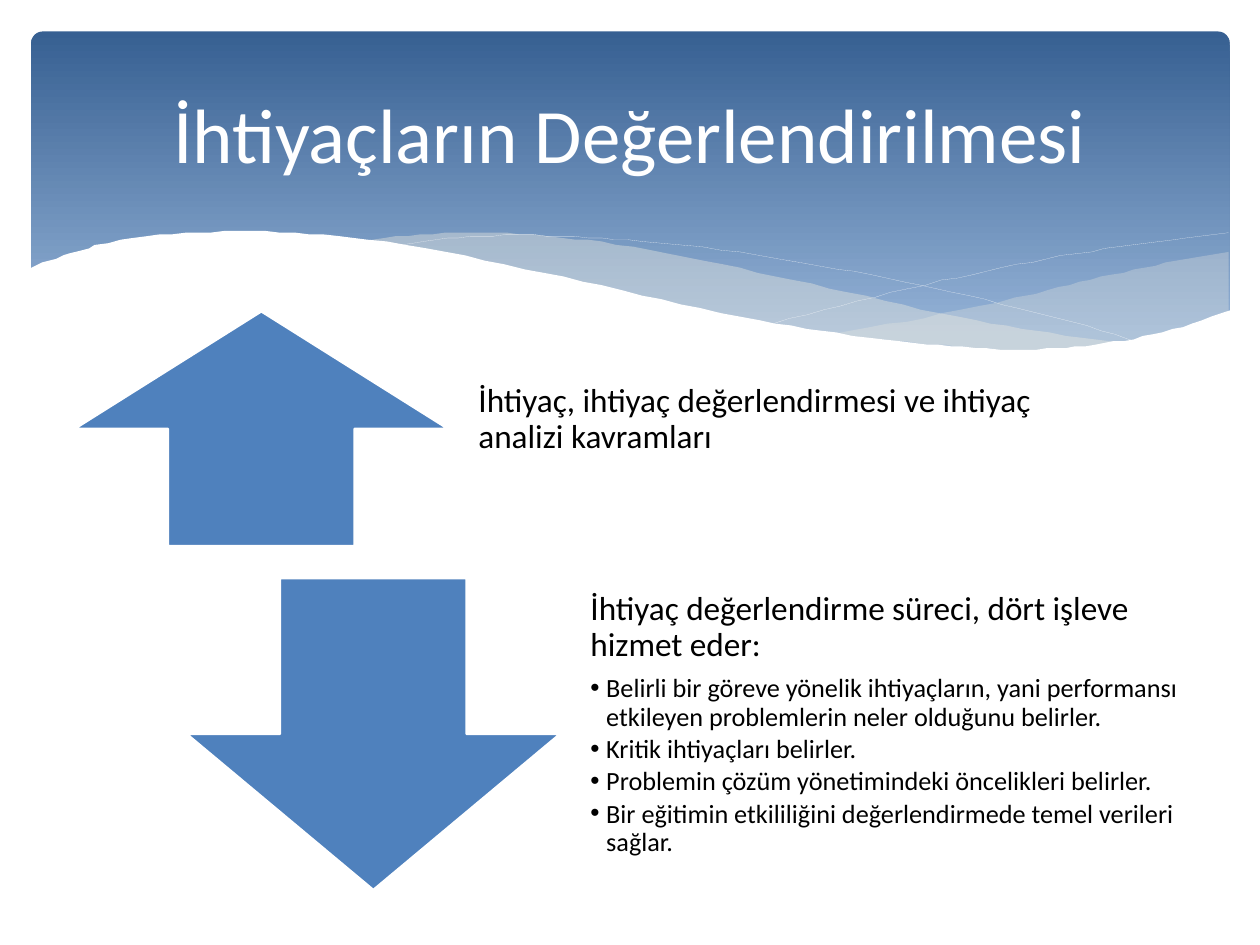
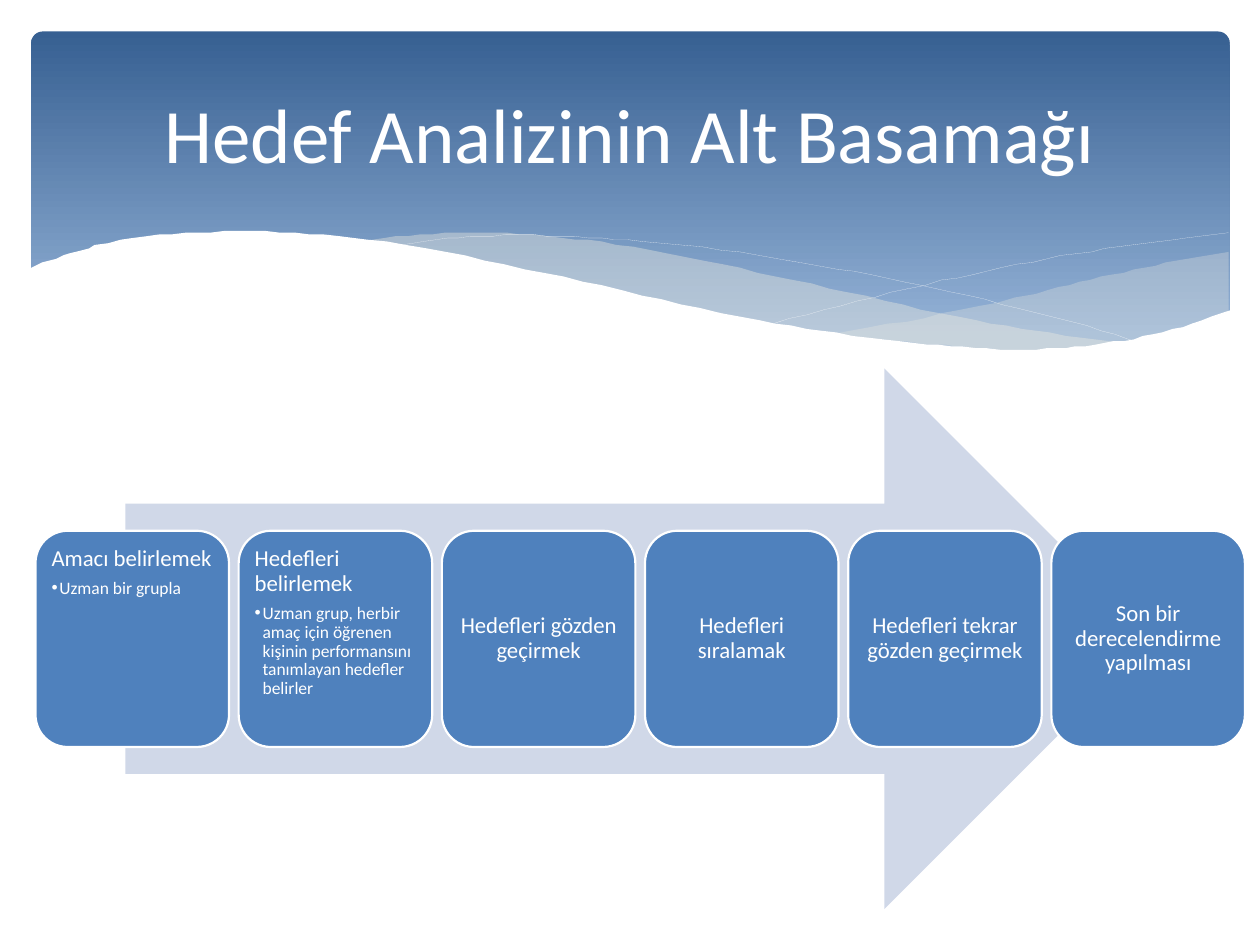
"""Build two Turkish slides on needs assessment and goal analysis under a shared wave band."""
from itertools import pairwise
from lxml.etree import SubElement
from pptx import Presentation
from pptx.dml.color import RGBColor
from pptx.enum.shapes import MSO_SHAPE as SHAPE
from pptx.enum.text import MSO_ANCHOR as ANCHOR, MSO_AUTO_SIZE as AUTO, PP_ALIGN as ALIGN
from pptx.oxml.ns import qn
from pptx.util import Pt

WHITE = RGBColor(0xFF, 0xFF, 0xFF)
BLACK = RGBColor(0x00, 0x00, 0x00)
NAVY = RGBColor(0x37, 0x60, 0x92)
SKY = RGBColor(0x95, 0xB3, 0xD7)
CREAM = RGBColor(0xEE, 0xEC, 0xE1)
BLUE = RGBColor(0x4F, 0x81, 0xBD)
PALE = RGBColor(0xD0, 0xD8, 0xE8)
FONT = "Calibri"
CURVE_STEPS = 10

RIGHT_TOP = [(476, 191), (580, 170.5), (641.5, 155.5), (702.5, 144)]
RIGHT_BOTTOM = [(476, 191), (536, 197), (586, 200), (640, 196), (702.5, 178)]
MIDDLE_TOP = [(206, 137.5), (274, 133), (352, 139.5), (453, 160), (558, 183), (643, 196.5)]
MIDDLE_BOTTOM = [(206, 137.5), (260.5, 146), (353.5, 167), (456.5, 188),
                 (520, 197), (581, 200), (643, 196.5)]
FALLING = [(222.5, 140.5), (289, 134.5), (367, 138), (479, 153.5), (572.5, 173.5), (653, 196)]
RISING = [(441.5, 185), (538.5, 160.5), (623.5, 143.5), (702, 133)]
PAGE_TOP = [(16.5, 153.5), (54.5, 140.5), (127.5, 132.5), (210, 137), (322, 158.5),
            (434, 183), (522.5, 196), (592.5, 199.5), (647.5, 193.5), (703.5, 177)]
PAGE_BOTTOM = [(16.5, 237), (703.5, 237)]
FILLED_WAVES = [(RIGHT_TOP, RIGHT_BOTTOM, CREAM, 29), (MIDDLE_TOP, MIDDLE_BOTTOM, CREAM, 40)]
THIN_LINES = [FALLING, RISING]
PAGE_WAVE = (PAGE_TOP, PAGE_BOTTOM, WHITE, 100)

TITLES = [("İhtiyaçların Değerlendirilmesi", "Two Content"),
          ("Hedef Analizinin Alt Basamağı", "Title Only")]
NEEDS = [
    (SHAPE.UP_ARROW, (178, 134), (178, 134),
     "İhtiyaç, ihtiyaç değerlendirmesi ve ihtiyaç analizi kavramları", []),
    (SHAPE.DOWN_ARROW, (330.5, 178), (323.5, 191.5),
     "İhtiyaç değerlendirme süreci, dört işleve hizmet eder:",
     ["Belirli bir göreve yönelik ihtiyaçların, yani performansı etkileyen "
      "problemlerin neler olduğunu belirler.",
      "Kritik ihtiyaçları belirler.",
      "Problemin çözüm yönetimindeki öncelikleri belirler.",
      "Bir eğitimin etkililiğini değerlendirmede temel verileri sağlar."])]
STEPS = [
    ("Amacı belirlemek", ["Uzman bir grupla"]),
    ("Hedefleri belirlemek",
     ["Uzman grup, herbir amaç için öğrenen kişinin performansını tanımlayan "
      "hedefler belirler"]),
    ("Hedefleri gözden geçirmek", []),
    ("Hedefleri sıralamak", []),
    ("Hedefleri tekrar gözden geçirmek", []),
    ("Son bir derecelendirme yapılması", [])]
ROW_SHIFT = 64
CARD_LEFT, CARD_WIDTH, CARD_PITCH = 20.3, 110.6, 116.1


def smooth(knots):
    """Return points on a cubic curve that runs through the knots from left to right."""
    widths = [x1 - x0 for (x0, _), (x1, _) in pairwise(knots)]
    secants = [(y1 - y0) / (x1 - x0) for (x0, y0), (x1, y1) in pairwise(knots)]
    inner = [(d0 * w1 + d1 * w0) / (w0 + w1)
             for (d0, d1), (w0, w1) in zip(pairwise(secants), pairwise(widths))] or secants
    slopes = [2 * secants[0] - inner[0], *inner, 2 * secants[-1] - inner[-1]]
    points = [knots[0]]
    for ((x0, y0), (_, y1)), w, (m0, m1) in zip(pairwise(knots), widths, pairwise(slopes)):
        for step in range(1, CURVE_STEPS + 1):
            t = step / CURVE_STEPS
            blend = t * t * (3 - 2 * t)
            bend = w * t * (1 - t) * (m0 * (1 - t) - m1 * t)
            points.append((x0 + w * t, y0 + (y1 - y0) * blend + bend))
    return points


def add_preset(s, kind, box, fill, line=None):
    """Add a flat preset shape with an optional outline."""
    sp = s.shapes.add_shape(kind, *map(Pt, box))
    sp.shadow.inherit = False
    sp.fill.solid()
    sp.fill.fore_color.rgb = fill
    if line is None:
        sp.line.fill.background()
    else:
        sp.line.color.rgb = line
        sp.line.width = Pt(1.25)
    return sp


prs = Presentation()
prs.slide_width, prs.slide_height = Pt(720), Pt(540)

for title, layout in TITLES:
    s = prs.slides.add_slide(prs.slide_layouts.get_by_name(layout))
    band = add_preset(s, SHAPE.ROUNDED_RECTANGLE, (17.8, 18, 684.9, 194.4), NAVY)
    band.adjustments[0] = 0.034
    band.fill.gradient()
    band.fill.gradient_angle = 270
    for stop, color, position in zip(band.fill.gradient_stops, (NAVY, SKY), (0, 0.9)):
        stop.color.rgb = color
        stop.position = position

    lines = [(knots, None, None, 100) for knots in THIN_LINES]
    for top, bottom, fill, opacity in [*FILLED_WAVES, *lines, PAGE_WAVE]:
        points = smooth(top)
        if bottom:
            points += reversed(smooth(bottom))
        builder = s.shapes.build_freeform(*points[0], scale=float(Pt(1)))
        builder.add_line_segments(points[1:], close=bool(bottom))
        wave = builder.convert_to_shape()
        wave.shadow.inherit = False
        if fill is None:
            wave.fill.background()
            wave.line.color.rgb = WHITE
            wave.line.width = Pt(0.05)
            continue
        wave.fill.solid()
        wave.fill.fore_color.rgb = fill
        wave.line.fill.background()
        if opacity < 100:
            clr = wave.element.spPr.find(qn("a:solidFill"))[0]
            SubElement(clr, qn("a:alpha")).set("val", str(opacity * 1000))

    sp = s.shapes.title
    sp.left, sp.top, sp.width, sp.height = Pt(36), Pt(26.6), Pt(648), Pt(98.6)
    tf = sp.text_frame
    tf.text = title
    tf.auto_size = AUTO.NONE
    tf.vertical_anchor = ANCHOR.MIDDLE
    p = tf.paragraphs[0]
    p.alignment = ALIGN.CENTER
    font = p.runs[0].font
    font.name, font.size, font.color.rgb = FONT, Pt(44), WHITE
    sp.element.getparent().append(sp.element)

needs_slide, steps_slide = prs.slides
texts = []

bodies = [sp for sp in needs_slide.placeholders if sp.placeholder_format.idx in (1, 2)]
for i, (body, need) in enumerate(zip(bodies, NEEDS)):
    kind, (arrow_top, arrow_height), (text_top, text_height), heading, items = need
    shift = ROW_SHIFT * i
    add_preset(needs_slide, kind, (42.8 + shift, arrow_top, 213.1, arrow_height), BLUE, WHITE)
    body.left, body.top = Pt(262.8 + shift), Pt(text_top)
    body.width, body.height = Pt(362.2), Pt(text_height)
    tf = body.text_frame
    tf.vertical_anchor = ANCHOR.MIDDLE
    tf.margin_left = tf.margin_right = tf.margin_bottom = Pt(10.6)
    tf.margin_top = Pt(0)
    body.element.getparent().append(body.element)
    texts.append((tf, heading, items, (19, 15), 9, BLACK, ALIGN.LEFT))

add_preset(steps_slide, SHAPE.RIGHT_ARROW, (71.7, 210.5, 588.2, 309), PALE)
for i, (heading, items) in enumerate(STEPS):
    box = (CARD_LEFT + CARD_PITCH * i, 303.3, CARD_WIDTH, 123.6)
    tf = add_preset(steps_slide, SHAPE.ROUNDED_RECTANGLE, box, BLUE, WHITE).text_frame
    tf.margin_left = tf.margin_right = tf.margin_top = tf.margin_bottom = Pt(3.8)
    tf.vertical_anchor = ANCHOR.TOP if items else ANCHOR.MIDDLE
    align = ALIGN.LEFT if items else ALIGN.CENTER
    texts.append((tf, heading, items, (13, 10), 4.5, WHITE, align))

for tf, heading, items, sizes, indent, color, align in texts:
    tf.word_wrap = True
    tf.auto_size = AUTO.NONE
    tf.text = "\n".join([heading, *items])
    for i, p in enumerate(tf.paragraphs):
        p.level = min(i, 1)
        p.alignment = align
        p.line_spacing = 0.9
        p.space_before = Pt(0)
        size = sizes[p.level]
        p.space_after = Pt(size * (0.15 if i else 0.35))
        font = p.runs[0].font
        font.name, font.size, font.color.rgb = FONT, Pt(size), color
        pPr = p._p.get_or_add_pPr()
        pPr.set("marL", str(Pt(indent if i else 0)))
        pPr.set("indent", str(Pt(-indent if i else 0)))
        if i:
            SubElement(pPr, qn("a:buFont")).set("typeface", "Arial")
            SubElement(pPr, qn("a:buChar")).set("char", "•")
        else:
            SubElement(pPr, qn("a:buNone"))

prs.save("out.pptx")
